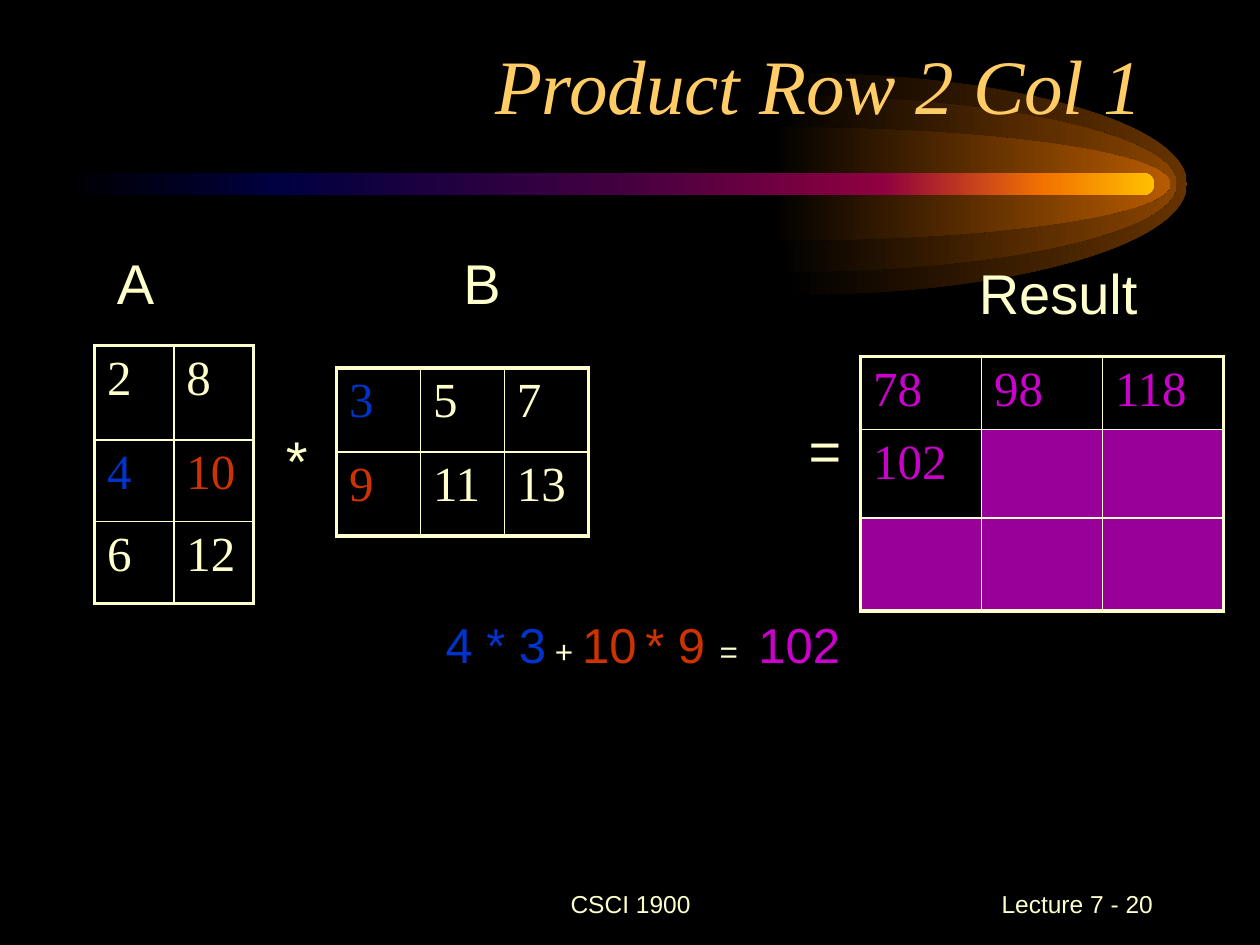
"""Build the matrix product slide for row 2, column 1."""
from lxml.etree import SubElement
from pptx import Presentation
from pptx.dml.color import RGBColor
from pptx.enum.shapes import MSO_SHAPE as Shape
from pptx.enum.text import MSO_ANCHOR as Anchor, MSO_AUTO_SIZE as Fit, PP_ALIGN as Align
from pptx.oxml.ns import qn
from pptx.util import Inches, Pt

CREAM, GOLD, BLACK = "FFFFCC", "FFCC66", "000000"
BLUE, RED, PINK, PURPLE = "0033CC", "CC3300", "CC00CC", "990099"
SANS, SERIF = "Arial", "Times New Roman"
THICK, THIN = 2.25, 1

GLOW_MIDDLE, GLOW_WIDTH, GLOW_TAIL, ROUNDNESS = 1.46, 3.13, 0.05, 0.55
GLOWS = [
    (6.29, 0.88, "663300"),
    (6.21, 0.70, "894400"),
    (6.16, 0.45, "B75B00"),
]
BEAM_BOX = (0.5, 1.37, 8.66, 0.18)
BEAM_STOPS = [
    (0, BLACK), (20, "000040"), (50, "400040"),
    (75, "8F0040"), (90, "F27300"), (100, "FFBF00"),
]

GROW = {"fit": Fit.SHAPE_TO_FIT_TEXT}
LABEL = {"fit": Fit.SHAPE_TO_FIT_TEXT, "wrap": False}
TEXTS = [
    ((3.42, 6.92, 3.17, 0.5), [("CSCI 1900", 14, CREAM)],
     {"align": Align.CENTER, "anchor": Anchor.MIDDLE}),
    ((7.17, 6.92, 2.08, 0.5), [("Lecture 7 - 20", 14, CREAM)],
     {"align": Align.RIGHT, "anchor": Anchor.MIDDLE}),
    ((0.67, 0.25, 8.5, 0.83), [("Product Row 2 Col 1", 44, GOLD)],
     {"align": Align.RIGHT, "anchor": Anchor.BOTTOM, "font": SERIF, "italic": True}),
    ((2.17, 3.33, 0.38, 0.63), [("*", 32, CREAM)], LABEL),
    ((6.32, 3.25, 0.77, 0.63), [("=", 32, CREAM)], GROW),
    ((0.83, 1.92, 0.5, 0.63), [("A", 32, CREAM)], LABEL),
    ((3.58, 1.92, 0.5, 0.63), [("B", 32, CREAM)], LABEL),
    ((7.67, 2, 1.46, 0.63), [("Result", 32, CREAM)], LABEL),
    ((3.33, 4.83, 3.92, 0.57), [
        (" 4 * 3", 28, BLUE), (" + ", 18, CREAM), ("10", 28, RED), (" ", 18, CREAM),
        ("* 9", 28, RED), (" = ", 18, CREAM, 3.33), ("102", 28, PINK),
    ], GROW),
]

MATRICES = [
    {"at": (0.75, 2.74), "width": 1.26, "rows": [0.75, 0.65, 0.65], "cells": [
        [("2", CREAM), ("8", CREAM)],
        [("4", BLUE), ("10", RED)],
        [("6", CREAM), ("12", CREAM)],
    ]},
    {"at": (2.67, 2.92), "width": 2, "rows": [2 / 3, 2 / 3], "cells": [
        [("3", BLUE), ("5", CREAM), ("7", CREAM)],
        [("9", RED), ("11", CREAM), ("13", CREAM)],
    ]},
    {"at": (6.83, 2.83), "width": 2.88, "rows": [0.58, 0.7, 0.74], "cells": [
        [("78", PINK), ("98", PINK), ("118", PINK)],
        [("102", PINK), None, None],
        [None, None, None],
    ]},
]


def color(value):
    return RGBColor.from_string(value)


def inches(values):
    return [Inches(value) for value in values]


def set_gradient(shape, stops):
    shape.shadow.inherit = False
    shape.line.fill.background()
    shape.fill.gradient()
    shape.fill.gradient_angle = 0
    stop_list = next(shape._element.iter(qn("a:gsLst")))
    for stop in list(stop_list):
        stop_list.remove(stop)
    for percent, value in stops:
        stop = SubElement(stop_list, qn("a:gs"), pos=str(percent * 1000))
        SubElement(stop, qn("a:srgbClr"), val=value)


def add_glow(slide, center, height, value):
    top, bottom = GLOW_MIDDLE - height, GLOW_MIDDLE + height
    corners = [
        (center, top), (center + GLOW_WIDTH, GLOW_MIDDLE), (center, bottom),
        (center - GLOW_TAIL, bottom), (center, GLOW_MIDDLE),
    ]
    points = [inches(corner) for corner in corners]
    outline = slide.shapes.build_freeform(*points[0])
    outline.add_line_segments(points[1:])
    glow = outline.convert_to_shape()
    tail, reach, lift = GLOW_TAIL, GLOW_WIDTH * ROUNDNESS, height * ROUNDNESS
    right = tail + GLOW_WIDTH
    curves = [
        [(tail + reach, 0), (right, height - lift), (right, height)],
        [(right, height + lift), (tail + reach, 2 * height), (tail, 2 * height)],
    ]
    segments = list(glow._element.iter(qn("a:lnTo")))
    for segment, curve in zip(segments, curves):
        bend = segment.getparent().makeelement(qn("a:cubicBezTo"))
        for x, y in curve:
            SubElement(bend, qn("a:pt"), x=str(Inches(x)), y=str(Inches(y)))
        segment.getparent().replace(segment, bend)
    set_gradient(glow, [(0, BLACK), (100, value)])


def add_span(para, text, size, value, spacing=0, font=SANS, italic=False):
    span = para.add_run()
    span.text = text
    formats = {"size": Pt(size), "name": font, "italic": italic}
    for name, setting in formats.items():
        setattr(span.font, name, setting)
    span.font.color.rgb = color(value)
    if spacing:
        span._r.get_or_add_rPr().set("spc", str(round(spacing * 100)))


def add_text(slide, place, spans, look):
    frame = slide.shapes.add_textbox(*inches(place)).text_frame
    formats = {
        "word_wrap": look.get("wrap", True),
        "auto_size": look.get("fit", Fit.NONE),
        "vertical_anchor": look.get("anchor", Anchor.TOP),
    }
    for name, setting in formats.items():
        setattr(frame, name, setting)
    para = frame.paragraphs[0]
    para.alignment = look.get("align", Align.LEFT)
    for span in spans:
        add_span(para, *span, font=look.get("font", SANS), italic=look.get("italic", False))


def set_borders(cell, outer_sides):
    properties = cell._tc.get_or_add_tcPr()
    for side, outer in outer_sides.items():
        width = Pt(THICK if outer else THIN)
        line = SubElement(properties, qn("a:ln" + side), w=str(width))
        fill = SubElement(line, qn("a:solidFill"))
        SubElement(fill, qn("a:srgbClr"), val=CREAM)


def add_matrix(slide, matrix):
    cells, heights, width = matrix["cells"], matrix["rows"], matrix["width"]
    row_count, column_count = len(cells), len(cells[0])
    place = inches(matrix["at"] + (width, sum(heights)))
    table = slide.shapes.add_table(row_count, column_count, *place).table
    table.first_row = table.horz_banding = False
    for row, height in zip(table.rows, heights):
        row.height = Inches(height)
    for r, values in enumerate(cells):
        for c, value in enumerate(values):
            cell = table.cell(r, c)
            set_borders(cell, {
                "L": c == 0, "R": c == column_count - 1,
                "T": r == 0, "B": r == row_count - 1,
            })
            cell.fill.solid()
            cell.fill.fore_color.rgb = color(BLACK if value else PURPLE)
            if value:
                text, ink = value
                add_span(cell.text_frame.paragraphs[0], text, 28, ink, font=SERIF)


def main():
    deck = Presentation()
    deck.slide_width, deck.slide_height = inches((10, 7.5))
    slide = deck.slides.add_slide(deck.slide_layouts[6])
    slide.background.fill.solid()
    slide.background.fill.fore_color.rgb = color(BLACK)
    for glow in GLOWS:
        add_glow(slide, *glow)
    beam = slide.shapes.add_shape(Shape.ROUNDED_RECTANGLE, *inches(BEAM_BOX))
    beam.adjustments[0] = 0.5
    set_gradient(beam, BEAM_STOPS)
    for matrix in MATRICES:
        add_matrix(slide, matrix)
    for text in TEXTS:
        add_text(slide, *text)
    deck.save("out.pptx")


if __name__ == "__main__":
    main()
